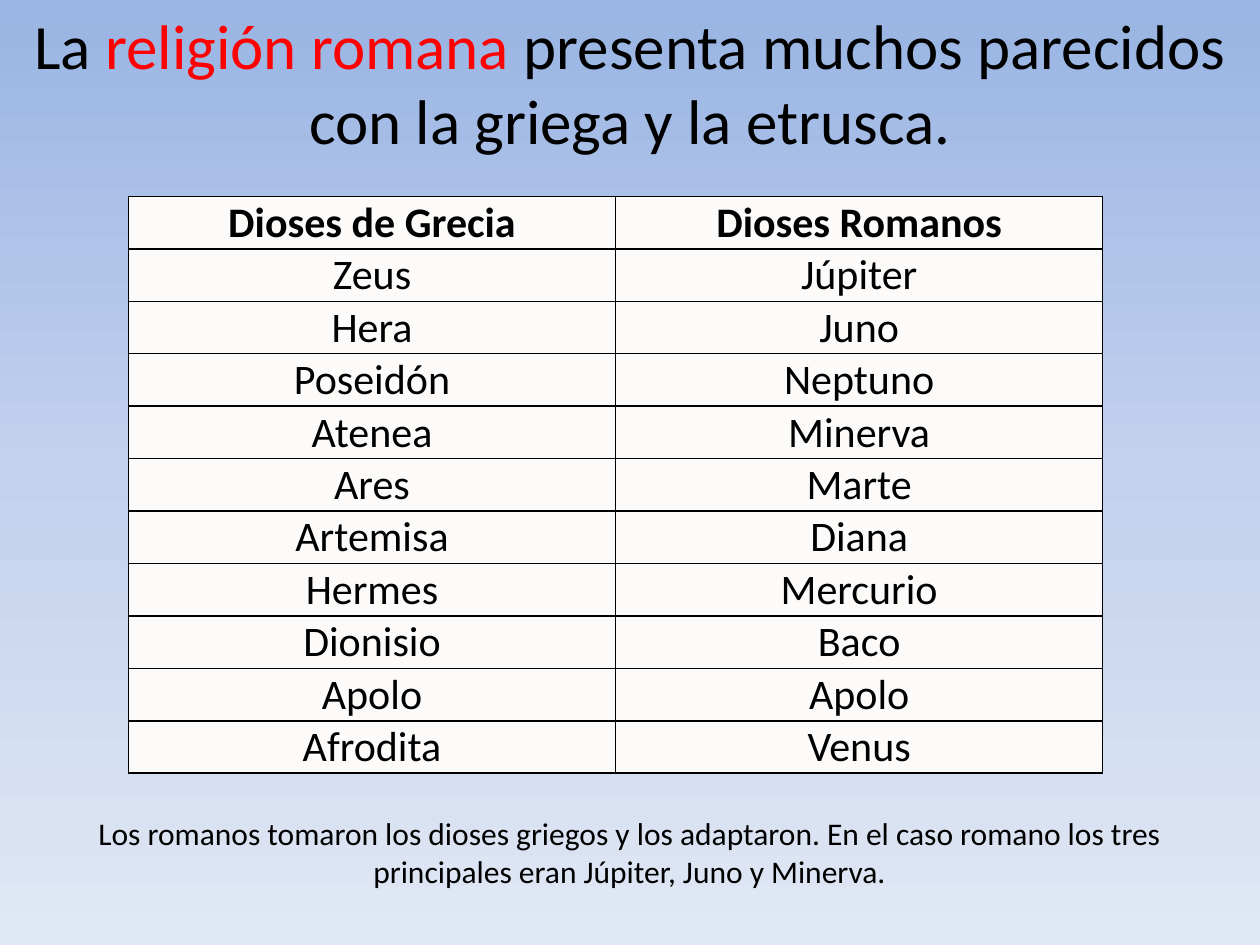
from copy import deepcopy

from pptx import Presentation
from pptx.dml.color import RGBColor
from pptx.enum.text import MSO_ANCHOR, MSO_AUTO_SIZE, PP_ALIGN
from pptx.oxml.ns import qn
from pptx.oxml.xmlchemy import OxmlElement
from pptx.util import Cm, Pt

CENTER = PP_ALIGN.CENTER
TOP, MIDDLE = MSO_ANCHOR.TOP, MSO_ANCHOR.MIDDLE
GROW = MSO_AUTO_SIZE.SHAPE_TO_FIT_TEXT

FONT = "Calibri"
BLACK, RED, PAPER = "000000", "FF0000", "FCFBF9"
SKY = [(0, "9AB5E4"), (0.5, "C2D1ED"), (1, "E1E8F5")]

TITLE = [
    ("La ", BLACK),
    ("religión romana ", RED),
    ("presenta muchos parecidos con la griega y la etrusca.", BLACK),
]
GODS = [
    ("Dioses de Grecia", "Dioses Romanos"),
    ("Zeus", "Júpiter"),
    ("Hera", "Juno"),
    ("Poseidón", "Neptuno"),
    ("Atenea", "Minerva"),
    ("Ares", "Marte"),
    ("Artemisa", "Diana"),
    ("Hermes", "Mercurio"),
    ("Dionisio", "Baco"),
    ("Apolo", "Apolo"),
    ("Afrodita", "Venus"),
]
CAPTION = (
    "Los romanos tomaron los dioses griegos y los adaptaron. "
    "En el caso romano los tres principales eran Júpiter, Juno y Minerva."
)


def color(value):
    return RGBColor.from_string(value)


def format_span(span, size, value=BLACK, bold=False):
    span.font.name = FONT
    span.font.size = Pt(size)
    span.font.bold = bold
    span.font.color.rgb = color(value)


def paint_background(page):
    fill = page.background.fill
    fill.gradient()
    fill.gradient_angle = 270
    stop_list = page.element.find(".//" + qn("a:gsLst"))
    stop_list.insert(1, deepcopy(stop_list[0]))
    for stop, (position, value) in zip(fill.gradient_stops, SKY):
        stop.position = position
        stop.color.rgb = color(value)


def add_borders(cell):
    properties = cell._tc.get_or_add_tcPr()
    for index, side in enumerate(("a:lnL", "a:lnR", "a:lnT", "a:lnB")):
        line = OxmlElement(side)
        line.set("w", str(Pt(1)))
        solid = OxmlElement("a:solidFill")
        shade = OxmlElement("a:srgbClr")
        shade.set("val", BLACK)
        solid.append(shade)
        line.append(solid)
        properties.insert(index, line)


def prepare_frame(frame):
    frame.word_wrap = True
    frame.auto_size = GROW
    frame.vertical_anchor = TOP
    frame.paragraphs[0].alignment = CENTER


def fill_title(page):
    title = page.shapes.title
    title.left, title.top, title.width, title.height = Cm(0), Cm(0), Cm(25.4), Cm(3.33)
    prepare_frame(title.text_frame)
    for text, value in TITLE:
        span = title.text_frame.paragraphs[0].add_run()
        span.text = text
        format_span(span, 36, value)


def add_gods(page):
    table = page.shapes.add_table(
        len(GODS), len(GODS[0]), Cm(2.59), Cm(3.96), Cm(19.64), Cm(11.58)
    ).table
    table.horz_banding = False
    for row, names in enumerate(GODS):
        for column, name in enumerate(names):
            cell = table.cell(row, column)
            cell.text = name
            cell.vertical_anchor = MIDDLE
            cell.margin_left = cell.margin_right = Cm(0.02)
            cell.margin_top = cell.margin_bottom = Cm(0.02)
            cell.fill.solid()
            cell.fill.fore_color.rgb = color(PAPER)
            add_borders(cell)
            para = cell.text_frame.paragraphs[0]
            para.alignment = CENTER
            format_span(para.runs[0], 24, bold=row == 0)


def add_caption(page):
    box = page.shapes.add_textbox(Cm(1.19), Cm(16.28), Cm(23.01), Cm(2.31))
    box.text_frame.text = CAPTION
    prepare_frame(box.text_frame)
    format_span(box.text_frame.paragraphs[0].runs[0], 18)


def main():
    deck = Presentation()
    deck.slide_width, deck.slide_height = Cm(25.4), Cm(19.05)
    page = deck.slides.add_slide(deck.slide_layouts.get_by_name("Title Only"))
    paint_background(page)
    fill_title(page)
    add_gods(page)
    add_caption(page)
    deck.save("out.pptx")


if __name__ == "__main__":
    main()
